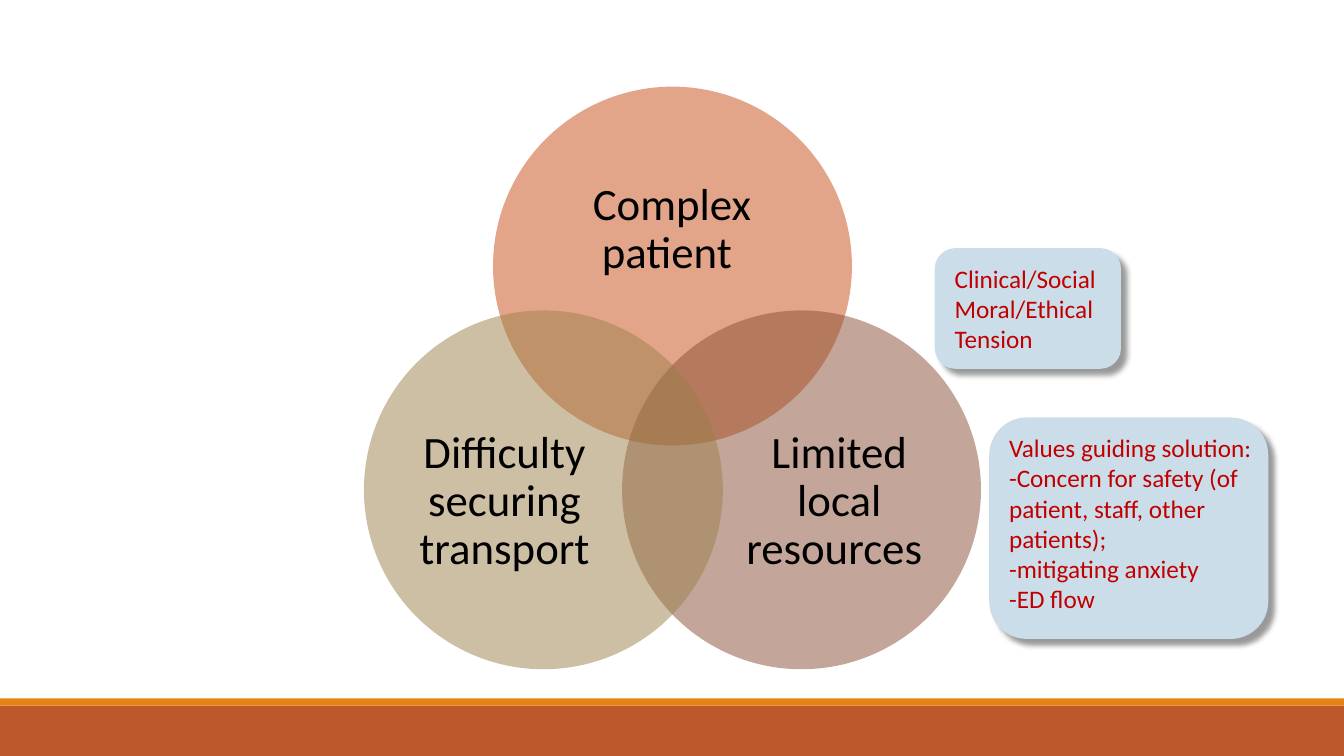
"""Builds a slide with a three-circle Venn diagram and two note cards."""
import pptx
import pptx.dml.color
import pptx.enum.shapes
import pptx.enum.text
import pptx.oxml
import pptx.oxml.ns
import pptx.util

Inches = pptx.util.Inches
Pt = pptx.util.Pt
SHAPE = pptx.enum.shapes.MSO_SHAPE
ALIGN = pptx.enum.text.PP_ALIGN
ANCHOR = pptx.enum.text.MSO_ANCHOR
DRAWING_NS = pptx.oxml.ns.nsdecls("a")

CARD_SHADOW = (
    f'<a:effectLst {DRAWING_NS}><a:outerShdw blurRad="50800" dist="76200" '
    'dir="2700000" algn="tl" rotWithShape="0"><a:srgbClr val="000000">'
    '<a:alpha val="40000"/></a:srgbClr></a:outerShdw></a:effectLst>'
)
HALF_ALPHA = f'<a:alpha {DRAWING_NS} val="50000"/>'

CIRCLE_SIZE = 3.56
CIRCLES = [
    ("Complex patient ", "C74C17", (1.28, 0), (0.47, 0.62, 2.61, 1.6)),
    ("Limited local resources ", "894E34", (2.56, 2.22), (1.09, 0.92, 2.13, 1.96)),
    ("Difficulty securing transport", "9D804A", (0, 2.22), (0.33, 0.92, 2.13, 1.96)),
]
TENSION = ["Clinical/Social", "Moral/Ethical", "Tension"]
VALUES = [
    "Values guiding solution:",
    "-Concern for safety (of patient, staff, other patients);",
    "-mitigating anxiety",
    "-ED flow",
]


def rgb(hex_color):
    """Return the colour for a hex string."""
    return pptx.dml.color.RGBColor.from_string(hex_color)


def apply_format(target, values):
    """Set each attribute named in values on target."""
    for attribute, value in values.items():
        setattr(target, attribute, value)


def add_filled(slide, preset, box, color):
    """Add a flat, borderless preset shape."""
    panel = slide.shapes.add_shape(preset, *map(Inches, box))
    panel.shadow.inherit = False
    panel.fill.solid()
    panel.fill.fore_color.rgb = rgb(color)
    panel.line.fill.background()
    return panel


def add_text(slide, box, lines, size, color, frame_format, paragraph_format):
    """Add a wrapped text box with one paragraph per line."""
    frame = slide.shapes.add_textbox(*map(Inches, box)).text_frame
    apply_format(frame, {"word_wrap": True, **frame_format})
    frame.text = "\n".join(lines)
    for paragraph in frame.paragraphs:
        apply_format(paragraph, paragraph_format)
        for run in paragraph.runs:
            apply_format(run.font, {"name": "Calibri", "size": Pt(size)})
            run.font.color.rgb = rgb(color)


def add_footer(slide, box):
    """Draw the footer band with its thin accent along the top."""
    left, top, width, height = box
    accent = 0.07
    add_filled(slide, SHAPE.RECTANGLE,
               (left, top + accent, width, height - accent), "BD582C")
    add_filled(slide, SHAPE.RECTANGLE, (left, top, width, accent), "E48312")


def add_venn(slide, origin):
    """Draw the overlapping circles and their labels from the origin."""
    for label, color, offset, (dx, dy, width, height) in CIRCLES:
        left, top = origin[0] + offset[0], origin[1] + offset[1]
        circle = add_filled(slide, SHAPE.OVAL,
                            (left, top, CIRCLE_SIZE, CIRCLE_SIZE), color)
        tint = circle.fill._xPr.find(".//" + pptx.oxml.ns.qn("a:srgbClr"))
        tint.append(pptx.oxml.parse_xml(HALF_ALPHA))
        margins = {f"margin_{side}": 0 for side in ("left", "top", "right", "bottom")}
        add_text(slide, (left + dx, top + dy, width, height), [label], 32, "000000",
                 {"vertical_anchor": ANCHOR.MIDDLE, **margins},
                 {"alignment": ALIGN.CENTER, "line_spacing": 0.9})


def add_card(slide, box, lines):
    """Draw a shadowed rounded card holding the given lines."""
    left, top, width, height = box
    inset = 0.09
    card = add_filled(slide, SHAPE.ROUNDED_RECTANGLE, box, "CCDDEA")
    card.line.color.rgb = rgb("CCDDEA")
    card.line.width = Pt(1.25)
    properties = card._element.spPr
    properties.remove(properties.find(pptx.oxml.ns.qn("a:effectLst")))
    properties.append(pptx.oxml.parse_xml(CARD_SHADOW))
    add_text(slide, (left + inset, top + inset, width - inset, height - 2 * inset),
             lines, 18, "C00000", {}, {"alignment": ALIGN.LEFT})


def main():
    """Build and save the slide."""
    deck = pptx.Presentation()
    apply_format(deck, {"slide_width": Inches(13.33), "slide_height": Inches(7.5)})
    slide = deck.slides.add_slide(deck.slide_layouts[6])
    add_footer(slide, (0, 6.93, 13.33, 0.57))
    add_card(slide, (9.28, 2.47, 1.83, 1.18), TENSION)
    add_venn(slide, (3.61, 0.86))
    add_card(slide, (9.82, 4.15, 2.75, 2.18), VALUES)
    deck.save("out.pptx")


if __name__ == "__main__":
    main()
